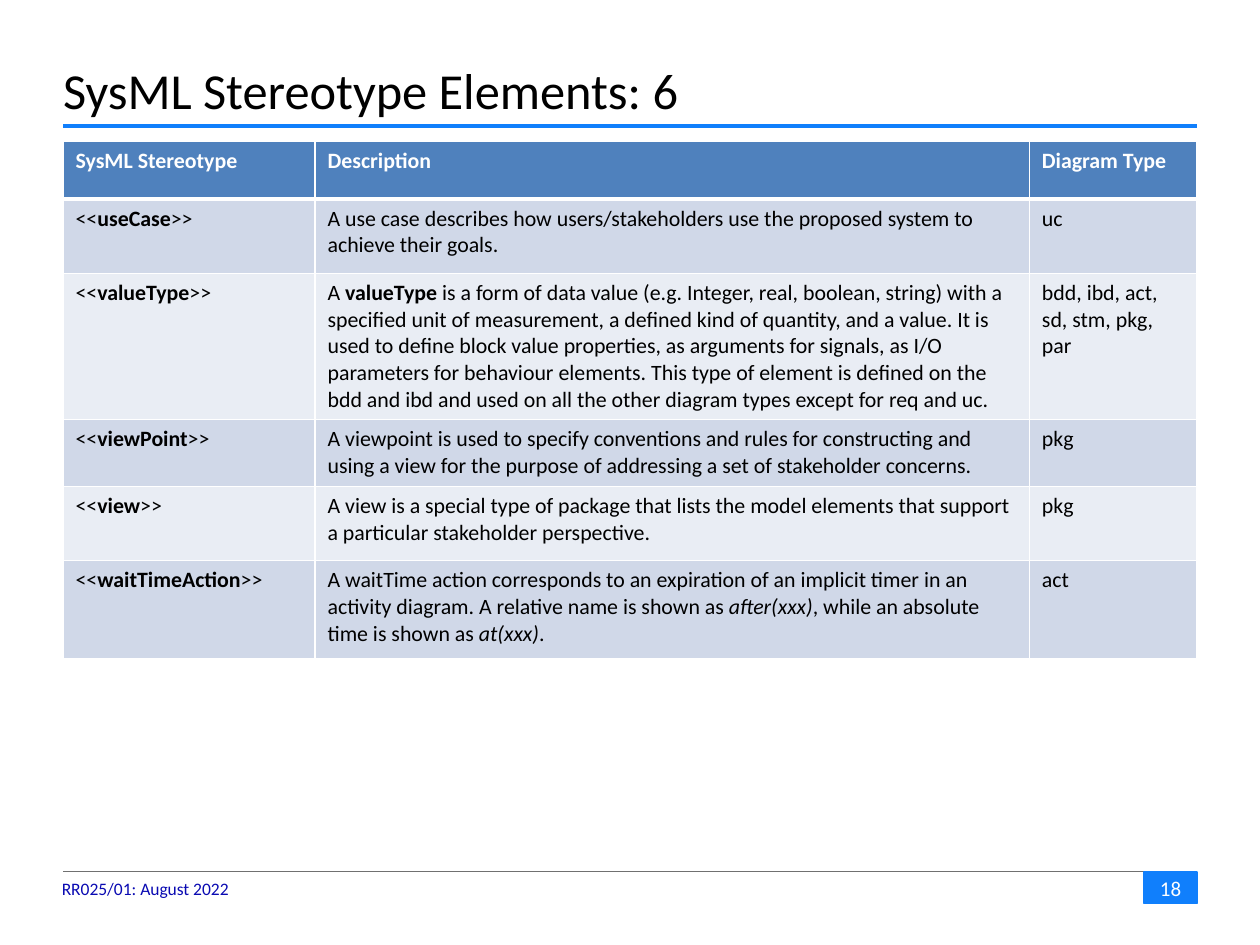
from lxml.etree import SubElement
from pptx import Presentation
from pptx.dml.color import RGBColor
from pptx.enum.shapes import MSO_CONNECTOR, MSO_SHAPE
from pptx.enum.text import MSO_ANCHOR, MSO_AUTO_SIZE, PP_ALIGN
from pptx.oxml.ns import qn
from pptx.util import Inches, Pt

THEME = {
    "font": "Calibri",
    "accent": "107FFC", "rule": "707070", "footer": "0A0AB2",
    "header": "4F81BD", "bands": ("D0D8E8", "E9EDF4"),
    "text": "000000", "light": "FFFFFF",
    "title_pt": 28.8, "table_pt": 12.5, "number_pt": 12, "footer_pt": 10,
}
LEFT, RIGHT = 0.5, 9.5
TITLE_RULE_Y, FOOTER_Y = 1, 6.92


def add_run(p, text, size, color, style=""):
    r = p.add_run()
    r.text = text
    r.font.name = THEME["font"]
    r.font.size = Pt(size)
    r.font.color.rgb = RGBColor.from_string(color)
    r.font.bold = style == "b"
    r.font.italic = style == "i"


def set_borders(cell, bottom_pt):
    tc_pr = cell._tc.get_or_add_tcPr()
    edges = (("a:lnL", 1), ("a:lnR", 1), ("a:lnT", 1), ("a:lnB", bottom_pt))
    for i, (tag, width) in enumerate(edges):
        ln = tc_pr.makeelement(qn(tag), {"w": str(Pt(width))})
        fill = SubElement(ln, qn("a:solidFill"))
        SubElement(fill, qn("a:srgbClr"), val=THEME["light"])
        tc_pr.insert(i, ln)


prs = Presentation()
prs.slide_width, prs.slide_height = Inches(10), Inches(7.5)
s = prs.slides.add_slide(prs.slide_layouts[5])

# Title
title = s.shapes.title
title.left, title.top = Inches(LEFT), Inches(0.42)
title.width, title.height = Inches(RIGHT - LEFT), Inches(0.58)
tf = title.text_frame
tf.auto_size = MSO_AUTO_SIZE.NONE
tf.vertical_anchor = MSO_ANCHOR.MIDDLE
tf.margin_left = tf.margin_right = 0
p = tf.paragraphs[0]
p.alignment = PP_ALIGN.LEFT
add_run(p, "SysML Stereotype Elements: 6", THEME["title_pt"], THEME["text"])

# Rules under the title and above the footer
for y, color, width in ((TITLE_RULE_Y, "accent", 2), (FOOTER_Y, "rule", 0.5)):
    rule = s.shapes.add_connector(MSO_CONNECTOR.STRAIGHT, Inches(LEFT), Inches(y),
                                  Inches(RIGHT), Inches(y))
    rule.line.color.rgb = RGBColor.from_string(THEME[color])
    rule.line.width = Pt(width)
    SubElement(rule._element.spPr, qn("a:effectLst"))

# Page number
number = s.shapes.add_shape(MSO_SHAPE.RECTANGLE, Inches(RIGHT - 0.42), Inches(FOOTER_Y),
                            Inches(0.42), Inches(0.25))
number.shadow.inherit = False
number.fill.solid()
number.fill.fore_color.rgb = RGBColor.from_string(THEME["accent"])
number.line.color.rgb = RGBColor.from_string(THEME["accent"])
number.line.width = Pt(1)
tf = number.text_frame
tf.vertical_anchor = MSO_ANCHOR.MIDDLE
p = tf.paragraphs[0]
p.alignment = PP_ALIGN.CENTER
add_run(p, "18", THEME["number_pt"], THEME["light"])

# Footer
footer = s.shapes.add_textbox(Inches(0.49), Inches(FOOTER_Y), Inches(1.45), Inches(0.27))
tf = footer.text_frame
tf.word_wrap = False
tf.margin_left = 0
add_run(tf.paragraphs[0], "RR025/01: August 2022", THEME["footer_pt"], THEME["footer"])

# Table content: stereotype, description runs (text, style), diagram types
headings = ("SysML Stereotype", "Description", "Diagram Type")
stereotypes = [
    ("useCase",
     [("A use case describes how users/stakeholders use the proposed system to "
       "achieve their goals.", "")],
     "uc"),
    ("valueType",
     [("A ", ""), ("valueType", "b"),
      (" is a form of data value (e.g. Integer, real, boolean, string) with a "
       "specified unit of measurement, a defined kind of quantity, and a value. It is "
       "used to define block value properties, as arguments for signals, as I/O "
       "parameters for behaviour elements. This type of element is defined on the "
       "bdd and ibd and used on all the other diagram types except for req and uc.", "")],
     "bdd, ibd, act, sd, stm, pkg, par"),
    ("viewPoint",
     [("A viewpoint is used to specify conventions and rules for constructing and "
       "using a view for the purpose of addressing a set of stakeholder concerns.", "")],
     "pkg"),
    ("view",
     [("A view is a special type of package that lists the model elements that support "
       "a particular stakeholder perspective.", "")],
     "pkg"),
    ("waitTimeAction",
     [("A waitTime action corresponds to an expiration of an implicit timer in an "
       "activity diagram. A relative name is shown as ", ""), ("after(xxx)", "i"),
      (", while an absolute time is shown as ", ""), ("at(xxx)", "i"), (".", "")],
     "act"),
]
rows = [[[(heading, "b")] for heading in headings]]
for name, description, diagrams in stereotypes:
    rows.append([[("<<", ""), (name, "b"), (">>", "")], description, [(diagrams, "")]])

# Table
col_widths = (2, 5.67, 1.33)
row_heights = (0.46, 0.59, 1.16, 0.53, 0.59, 0.78)
table = s.shapes.add_table(len(rows), len(col_widths), Inches(LEFT), Inches(1.12),
                           Inches(sum(col_widths)), Inches(sum(row_heights))).table
for col, width in zip(table.columns, col_widths):
    col.width = Inches(width)
for i, (height, row) in enumerate(zip(row_heights, rows)):
    table.rows[i].height = Inches(height)
    is_header = i == 0
    fill = THEME["header"] if is_header else THEME["bands"][(i - 1) % 2]
    color = THEME["light"] if is_header else THEME["text"]
    for j, runs in enumerate(row):
        cell = table.cell(i, j)
        cell.fill.solid()
        cell.fill.fore_color.rgb = RGBColor.from_string(fill)
        set_borders(cell, 3 if is_header else 1)
        for text, style in runs:
            add_run(cell.text_frame.paragraphs[0], text, THEME["table_pt"], color, style)

prs.save("out.pptx")
